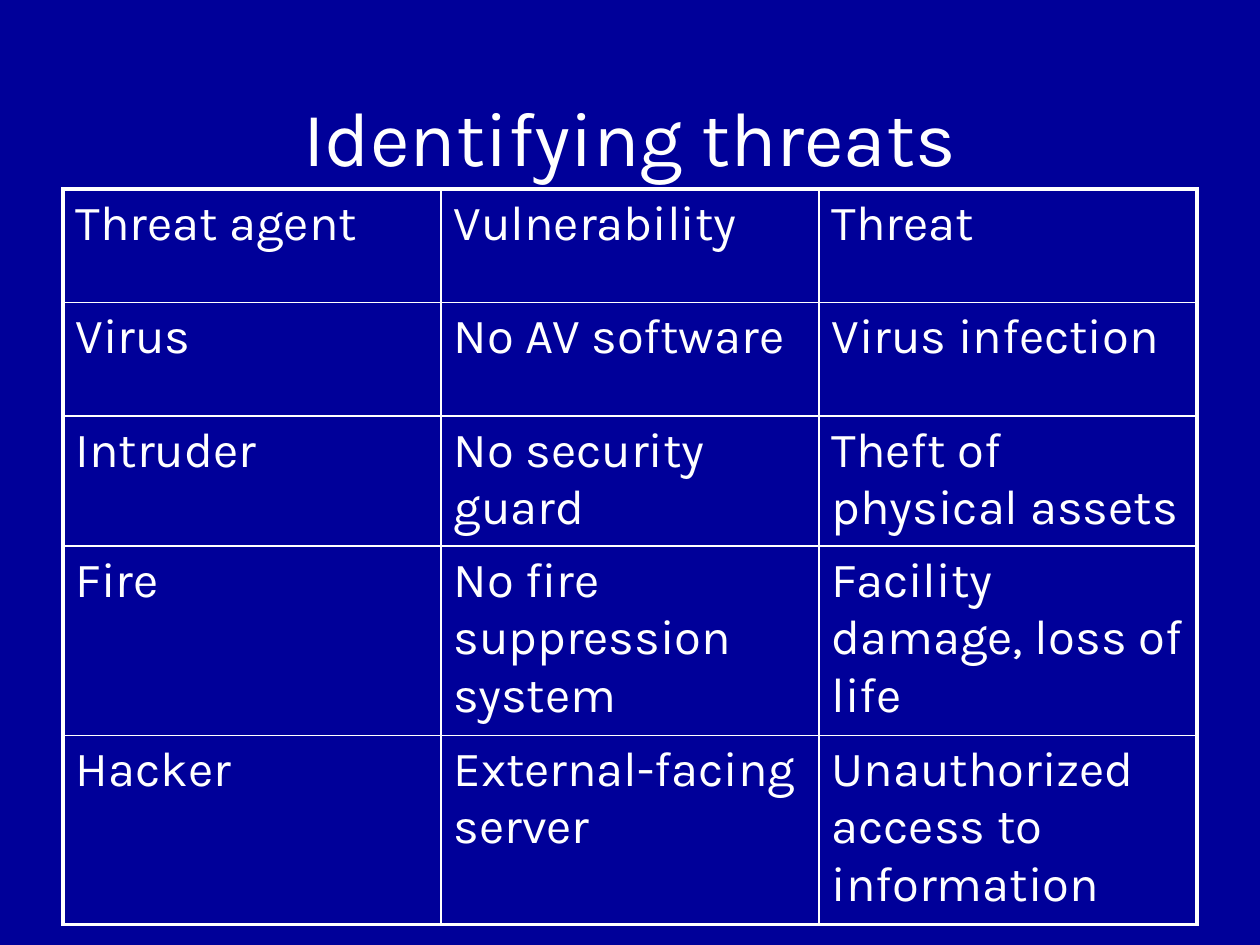
from dataclasses import dataclass

from lxml.etree import SubElement
from pptx import Presentation
from pptx.dml.color import RGBColor
from pptx.enum.text import MSO_ANCHOR, PP_ALIGN
from pptx.oxml.ns import qn
from pptx.util import Pt


@dataclass(frozen=True)
class Theme:
    background: str = "000099"
    ink: str = "FFFFFF"
    font: str = "Karla"
    title_size: float = 44
    cell_size: float = 28
    outer_line: float = 2.25
    inner_line: float = 1


THEME = Theme()
ROW_HEIGHT = 64.8
THREATS = [
    ("Threat agent", "Vulnerability", "Threat"),
    ("Virus", "No AV software", "Virus infection"),
    ("Intruder", "No security guard", "Theft of physical assets"),
    ("Fire", "No fire suppression system", "Facility damage, loss of life"),
    ("Hacker", "External-facing server", "Unauthorized access to information"),
]


def style_text(p, size):
    for r in p.runs:
        r.font.name = THEME.font
        r.font.size = Pt(size)
        r.font.color.rgb = RGBColor.from_string(THEME.ink)


def add_title(s, text, left, top, width, height):
    tf = s.shapes.add_textbox(Pt(left), Pt(top), Pt(width), Pt(height)).text_frame
    tf.word_wrap = True
    tf.vertical_anchor = MSO_ANCHOR.MIDDLE
    p = tf.paragraphs[0]
    p.text = text
    p.alignment = PP_ALIGN.CENTER
    style_text(p, THEME.title_size)


def set_borders(cell, outer_edges):
    """Draw all four borders, heavier where the edge is on the table's rim."""
    tc_pr = cell._tc.get_or_add_tcPr()
    for edge, is_outer in outer_edges.items():
        width = THEME.outer_line if is_outer else THEME.inner_line
        ln = SubElement(tc_pr, qn(f"a:ln{edge}"), w=str(Pt(width)))
        fill = SubElement(ln, qn("a:solidFill"))
        SubElement(fill, qn("a:srgbClr"), val=THEME.ink)


def add_threat_table(s, rows, left, top, width):
    n_rows, n_cols = len(rows), len(rows[0])
    table = s.shapes.add_table(n_rows, n_cols, Pt(left), Pt(top),
                               Pt(width), Pt(ROW_HEIGHT * n_rows)).table
    table.first_row = table.horz_banding = False
    for i, row in enumerate(rows):
        for j, text in enumerate(row):
            cell = table.cell(i, j)
            cell.text = text
            style_text(cell.text_frame.paragraphs[0], THEME.cell_size)
            set_borders(cell, {"L": j == 0, "R": j == n_cols - 1,
                               "T": i == 0, "B": i == n_rows - 1})
            cell.fill.background()


def build_slide(prs):
    s = prs.slides.add_slide(prs.slide_layouts[6])
    fill = s.background.fill
    fill.solid()
    fill.fore_color.rgb = RGBColor.from_string(THEME.background)
    add_title(s, "Identifying threats", 36, 23, 648, 109)
    add_threat_table(s, THREATS, 36, 108, 648)


def main():
    prs = Presentation()
    prs.slide_width, prs.slide_height = Pt(720), Pt(540)
    build_slide(prs)
    prs.save("out.pptx")


if __name__ == "__main__":
    main()
